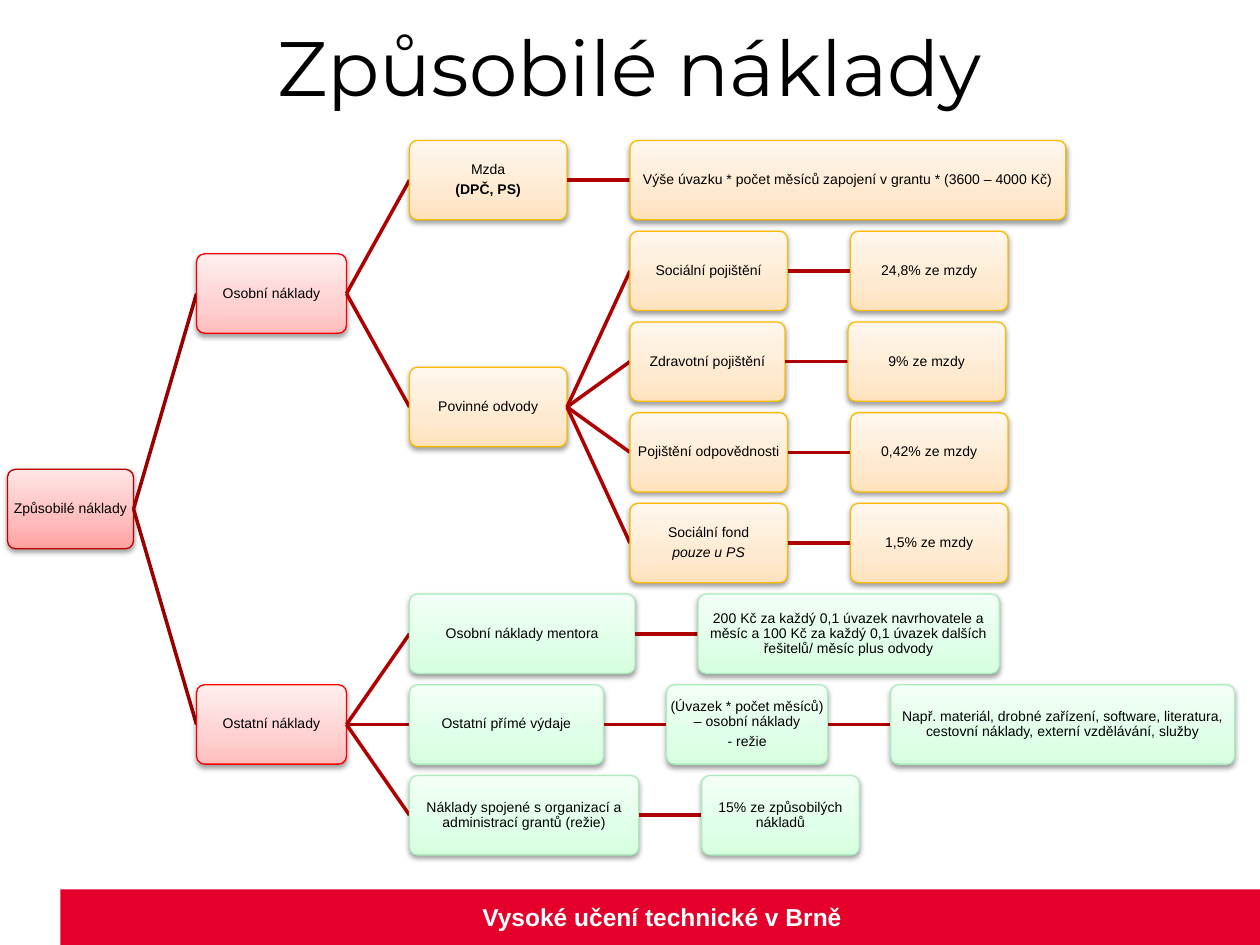
from copy import deepcopy
from dataclasses import dataclass

from lxml import etree
from pptx import Presentation
from pptx.dml.color import RGBColor
from pptx.enum import shapes, text
from pptx.oxml import ns
from pptx.util import Inches, Pt

BLACK = RGBColor(0x00, 0x00, 0x00)
WHITE = RGBColor(0xFF, 0xFF, 0xFF)
FOOTER_RED = RGBColor(0xE4, 0x00, 0x2B)
ROOT_LINK = RGBColor(0x9A, 0x00, 0x00)
BRANCH_LINK = RGBColor(0xAE, 0x00, 0x00)


@dataclass
class Palette:
    outline: RGBColor
    bottom: RGBColor
    middle: RGBColor
    top: RGBColor


DARK_RED = Palette(RGBColor(0xBC, 0x00, 0x00), RGBColor(0xFF, 0xA0, 0xA0),
                   RGBColor(0xFF, 0xBC, 0xBC), RGBColor(0xFF, 0xE5, 0xE5))
RED = Palette(RGBColor(0xF9, 0x00, 0x00), RGBColor(0xFF, 0xBD, 0xBD),
              RGBColor(0xFF, 0xD1, 0xD1), RGBColor(0xFF, 0xEE, 0xEE))
ORANGE = Palette(RGBColor(0xF9, 0xBC, 0x00), RGBColor(0xFF, 0xE2, 0xBD),
                 RGBColor(0xFF, 0xEA, 0xD1), RGBColor(0xFF, 0xF7, 0xEE))
GREEN = Palette(RGBColor(0xAB, 0xEC, 0xBC), RGBColor(0xD5, 0xFF, 0xDF),
                RGBColor(0xE0, 0xFF, 0xE8), RGBColor(0xF3, 0xFF, 0xF6))

BOX_HEIGHT = 0.63
COLUMN_GAP = 0.5
ROW_STEP = 0.72
FIRST_ROW = 1.43
TREE_LEFT = 0.06


@dataclass
class Node:
    label: str
    width: float
    palette: Palette
    children: tuple = ()
    second_line: str = ""
    bold: bool = False
    italic: bool = False
    center: float = 0


def insurance(label, rate, width=1.25, **options):
    return Node(label, width, ORANGE, (Node(rate, 1.25, ORANGE),), **options)


def cost_tree():
    wage = Node("Mzda", 1.25, ORANGE, (
        Node("Výše úvazku * počet měsíců zapojení v grantu * (3600 – 4000 Kč)", 3.46, ORANGE),
    ), second_line="(DPČ, PS)", bold=True)
    levies = Node("Povinné odvody", 1.25, ORANGE, (
        insurance("Sociální pojištění", "24,8% ze mzdy"),
        insurance("Zdravotní pojištění", "9% ze mzdy", 1.23),
        insurance("Pojištění odpovědnosti", "0,42% ze mzdy"),
        insurance("Sociální fond", "1,5% ze mzdy", second_line="pouze u PS", italic=True),
    ))
    mentor = Node("Osobní náklady mentora", 1.79, GREEN, (
        Node("200 Kč za každý 0,1 úvazek navrhovatele a měsíc a 100 Kč za každý "
             "0,1 úvazek dalších řešitelů/ měsíc plus odvody", 2.39, GREEN),
    ))
    examples = Node("Např. materiál, drobné zařízení, software, literatura, "
                    "cestovní náklady, externí vzdělávání, služby", 2.73, GREEN)
    direct = Node("Ostatní přímé výdaje", 1.54, GREEN, (
        Node("(Úvazek * počet měsíců) – osobní náklady", 1.28, GREEN, (examples,),
             second_line="- režie"),
    ))
    overhead = Node("Náklady spojené s organizací a administrací grantů (režie)", 1.82, GREEN, (
        Node("15% ze způsobilých nákladů", 1.25, GREEN),
    ))
    return Node("Způsobilé náklady", 1, DARK_RED, (
        Node("Osobní náklady", 1.19, RED, (wage, levies)),
        Node("Ostatní náklady", 1.19, RED, (mentor, direct, overhead)),
    ))


def place_rows(node, row=0):
    if not node.children:
        node.center = FIRST_ROW + row * ROW_STEP
        return row + 1
    for child in node.children:
        row = place_rows(child, row)
    node.center = (node.children[0].center + node.children[-1].center) / 2
    return row


def add_run(paragraph, content, size, color, font="Arial", bold=None, italic=None):
    run = paragraph.add_run()
    run.text = content
    run.font.name = font
    run.font.size = Pt(size)
    run.font.color.rgb = color
    run.font.bold = bold
    run.font.italic = italic
    paragraph.alignment = text.PP_ALIGN.CENTER


def fill_gradient(shape, palette):
    shape.fill.gradient()
    shape.fill.gradient_angle = 90
    stop_list = shape._element.spPr.find(ns.qn("a:gradFill")).find(ns.qn("a:gsLst"))
    stop_list.append(deepcopy(stop_list[-1]))
    colors = (palette.bottom, palette.middle, palette.top)
    for stop, color, position in zip(shape.fill.gradient_stops, colors, (0, 0.35, 1)):
        stop.color.rgb = color
        stop.position = position


def add_shadow(shape):
    shape.shadow.inherit = False
    effects = shape._element.spPr.find(ns.qn("a:effectLst"))
    shadow = etree.SubElement(effects, ns.qn("a:outerShdw"), blurRad="40000",
                              dist="20000", dir="5400000", rotWithShape="0")
    color = etree.SubElement(shadow, ns.qn("a:srgbClr"), val="000000")
    etree.SubElement(color, ns.qn("a:alpha"), val="38000")


def add_box(slide, node, left):
    shape = slide.shapes.add_shape(
        shapes.MSO_SHAPE.ROUNDED_RECTANGLE, Inches(left),
        Inches(node.center - BOX_HEIGHT / 2), Inches(node.width), Inches(BOX_HEIGHT))
    shape.adjustments[0] = 0.1
    fill_gradient(shape, node.palette)
    shape.line.color.rgb = node.palette.outline
    shape.line.width = Pt(0.75)
    add_shadow(shape)
    frame = shape.text_frame
    frame.word_wrap = True
    frame.vertical_anchor = text.MSO_ANCHOR.MIDDLE
    frame.margin_left = frame.margin_right = Inches(0.01)
    frame.margin_top = frame.margin_bottom = Inches(0.01)
    add_run(frame.paragraphs[0], node.label, 8, BLACK)
    if node.second_line:
        add_run(frame.add_paragraph(), node.second_line, 8, BLACK,
                bold=node.bold, italic=node.italic)
    for paragraph in frame.paragraphs:
        paragraph.line_spacing = 0.9
        paragraph.space_after = Pt(3)


def add_link(slide, start, end, color):
    connector = slide.shapes.add_connector(
        shapes.MSO_CONNECTOR.STRAIGHT, *(Inches(value) for value in (*start, *end)))
    connector.line.color.rgb = color
    connector.line.width = Pt(2)
    etree.SubElement(connector._element.spPr, ns.qn("a:effectLst"))


def draw_tree(slide, node, left, link_color):
    add_box(slide, node, left)
    right = left + node.width
    child_left = right + COLUMN_GAP
    for child in node.children:
        add_link(slide, (right, node.center), (child_left, child.center), link_color)
        draw_tree(slide, child, child_left, BRANCH_LINK)


def add_title(slide):
    title = slide.shapes.title
    title.left, title.top = Inches(0.5), Inches(0.05)
    title.width, title.height = Inches(9), Inches(0.94)
    title.text_frame.vertical_anchor = text.MSO_ANCHOR.MIDDLE
    add_run(title.text_frame.paragraphs[0], "Způsobilé náklady", 44, BLACK, "Montserrat")


def add_footer(slide):
    bar = slide.shapes.add_shape(shapes.MSO_SHAPE.RECTANGLE, Inches(0.48), Inches(7.06),
                                 Inches(9.52), Inches(0.44))
    bar.shadow.inherit = False
    bar.fill.solid()
    bar.fill.fore_color.rgb = FOOTER_RED
    bar.line.fill.background()
    label = slide.shapes.add_textbox(Inches(0.51), Inches(7.11), Inches(9.49), Inches(0.34))
    label.text_frame.word_wrap = True
    add_run(label.text_frame.paragraphs[0], "Vysoké učení technické v Brně", 14, WHITE, bold=True)


def main():
    presentation = Presentation()
    presentation.slide_width, presentation.slide_height = Inches(10), Inches(7.5)
    slide = presentation.slides.add_slide(presentation.slide_layouts[5])
    add_footer(slide)
    add_title(slide)
    root = cost_tree()
    place_rows(root)
    draw_tree(slide, root, TREE_LEFT, ROOT_LINK)
    presentation.save("out.pptx")


if __name__ == "__main__":
    main()
